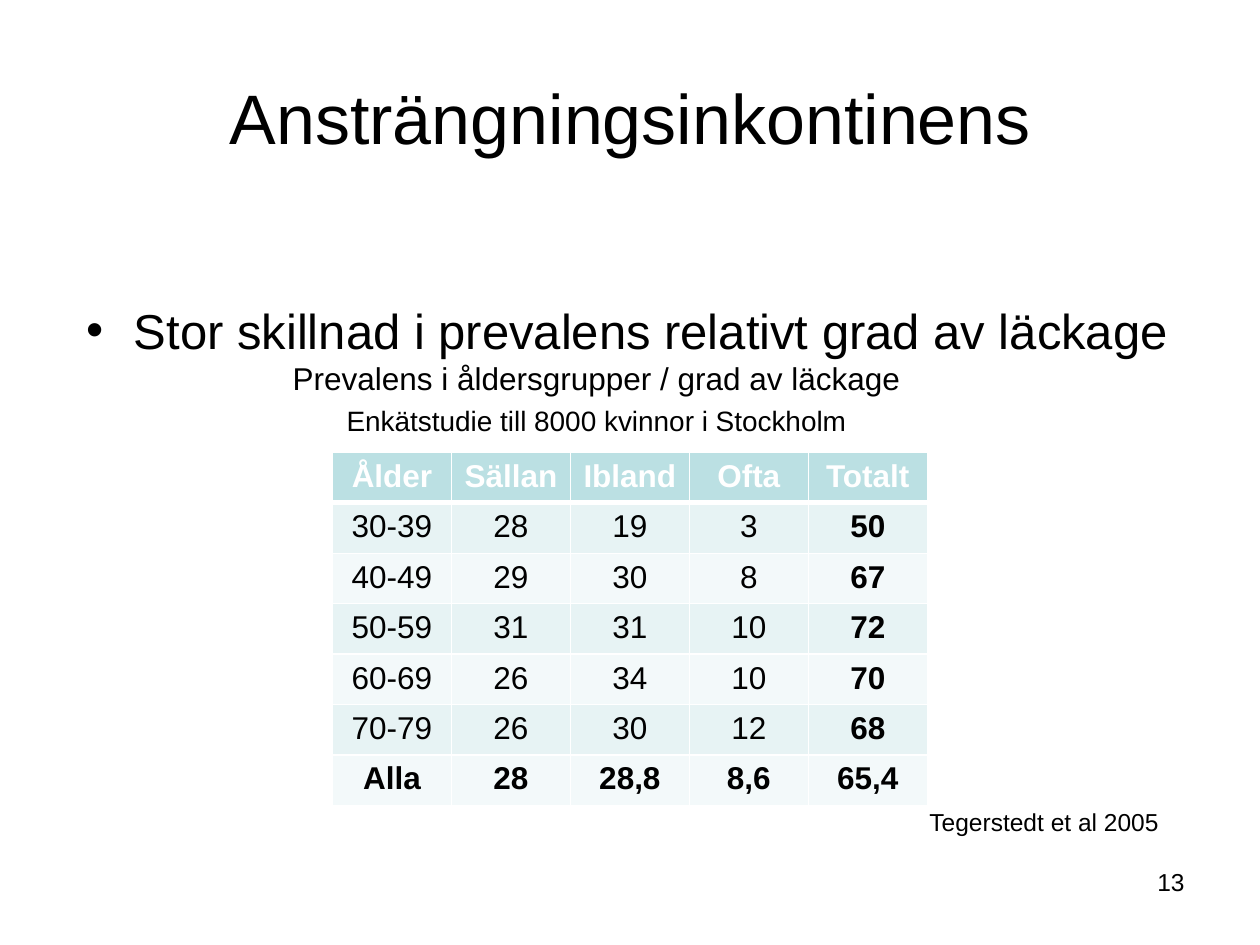
import dataclasses

import pptx
import pptx.dml.color
import pptx.enum.text
import pptx.oxml.ns
import pptx.util
from lxml import etree

Pt = pptx.util.Pt
Align = pptx.enum.text.PP_ALIGN
Anchor = pptx.enum.text.MSO_ANCHOR
Fit = pptx.enum.text.MSO_AUTO_SIZE
qn = pptx.oxml.ns.qn


@dataclasses.dataclass(frozen=True)
class Theme:
    font: str = "Arial"
    ink: str = "000000"
    white: str = "FFFFFF"
    head: str = "BBE0E3"
    bands: tuple = ("E7F3F4", "F3F9FA")
    title: int = 40
    body: int = 28
    cell: int = 18
    sub: int = 16
    small: int = 14


THEME = Theme()

ROWS = [
    ("Ålder", "Sällan", "Ibland", "Ofta", "Totalt"),
    ("30-39", "28", "19", "3", "50"),
    ("40-49", "29", "30", "8", "67"),
    ("50-59", "31", "31", "10", "72"),
    ("60-69", "26", "34", "10", "70"),
    ("70-79", "26", "30", "12", "68"),
    ("Alla", "28", "28,8", "8,6", "65,4"),
]


def rgb(code):
    return pptx.dml.color.RGBColor.from_string(code)


def write(para, text, size=THEME.cell, color=THEME.ink, bold=False,
          align=Align.LEFT, before=0):
    """Put formatted text in a paragraph."""
    para.alignment = align
    para.space_before = Pt(before)
    run = para.add_run()
    run.text = text
    font = run.font
    font.name = THEME.font
    font.size = Pt(size)
    font.bold = bold
    font.color.rgb = rgb(color)


def add_box(slide, left, top, width, height, wrap=True):
    """Add a text box and return its frame."""
    box = slide.shapes.add_textbox(Pt(left), Pt(top), Pt(width), Pt(height))
    box.text_frame.word_wrap = wrap
    return box.text_frame


def add_title(slide, text):
    title = slide.shapes.title
    title.left, title.top = Pt(36), Pt(21.6)
    title.width, title.height = Pt(648), Pt(90)
    frame = title.text_frame
    frame.auto_size = Fit.NONE
    frame.vertical_anchor = Anchor.MIDDLE
    write(frame.paragraphs[0], text, size=THEME.title, align=Align.CENTER)


def add_bullet(para, indent):
    props = para._p.get_or_add_pPr()
    props.set("marL", str(Pt(indent)))
    props.set("indent", str(-Pt(indent)))
    etree.SubElement(props, qn("a:buFont"), typeface=THEME.font)
    etree.SubElement(props, qn("a:buChar"), char="•")


def set_edge(cell, side, width):
    """Draw one white cell border."""
    props = cell._tc.get_or_add_tcPr()
    line = etree.SubElement(props, qn("a:ln" + side), w=str(Pt(width)))
    fill = etree.SubElement(line, qn("a:solidFill"))
    etree.SubElement(fill, qn("a:srgbClr"), val=THEME.white)


def add_grid(slide, left, top, width, height):
    count, last = len(ROWS), len(ROWS[0]) - 1
    frame = slide.shapes.add_table(count, last + 1, Pt(left), Pt(top),
                                   Pt(width), Pt(height))
    for r, row in enumerate(ROWS):
        head = r == 0
        for c, text in enumerate(row):
            cell = frame.table.cell(r, c)
            # A thick rule parts the header from the data
            edges = {"L": 1, "R": 1, "T": 3 if r == 1 else 1,
                     "B": 3 if head else 1}
            for side, weight in edges.items():
                set_edge(cell, side, weight)
            cell.fill.solid()
            shade = THEME.head if head else THEME.bands[(r - 1) % 2]
            cell.fill.fore_color.rgb = rgb(shade)
            write(cell.text_frame.paragraphs[0], text, align=Align.CENTER,
                  color=THEME.white if head else THEME.ink,
                  bold=head or r == count - 1 or c == last)


def main():
    deck = pptx.Presentation()
    deck.slide_width, deck.slide_height = Pt(720), Pt(540)
    slide = deck.slides.add_slide(deck.slide_layouts[5])

    # Heading and main point
    add_title(slide, "Ansträngningsinkontinens")
    point = add_box(slide, 42.5, 168, 648, 309).paragraphs[0]
    write(point, "Stor skillnad i prevalens relativt grad av läckage",
          size=THEME.body, before=3)
    add_bullet(point, 27)

    # Slide number
    number = add_box(slide, 516, 492, 168, 37)
    write(number.paragraphs[0], "13", size=THEME.small, align=Align.RIGHT)

    # Table with its caption
    add_grid(slide, 190, 258.5, 340, 201.6)
    note = add_box(slide, 158.4, 201.5, 365, 52.5, wrap=False)
    write(note.paragraphs[0], "Prevalens i åldersgrupper / grad av läckage",
          align=Align.CENTER)
    write(note.add_paragraph(), "Enkätstudie till 8000 kvinnor i Stockholm",
          size=THEME.sub, align=Align.CENTER, before=4)

    # Citation
    cite = add_box(slide, 524, 457.5, 146, 24.5, wrap=False)
    write(cite.paragraphs[0], "Tegerstedt et al 2005", size=THEME.small)

    deck.save("out.pptx")


if __name__ == "__main__":
    main()
